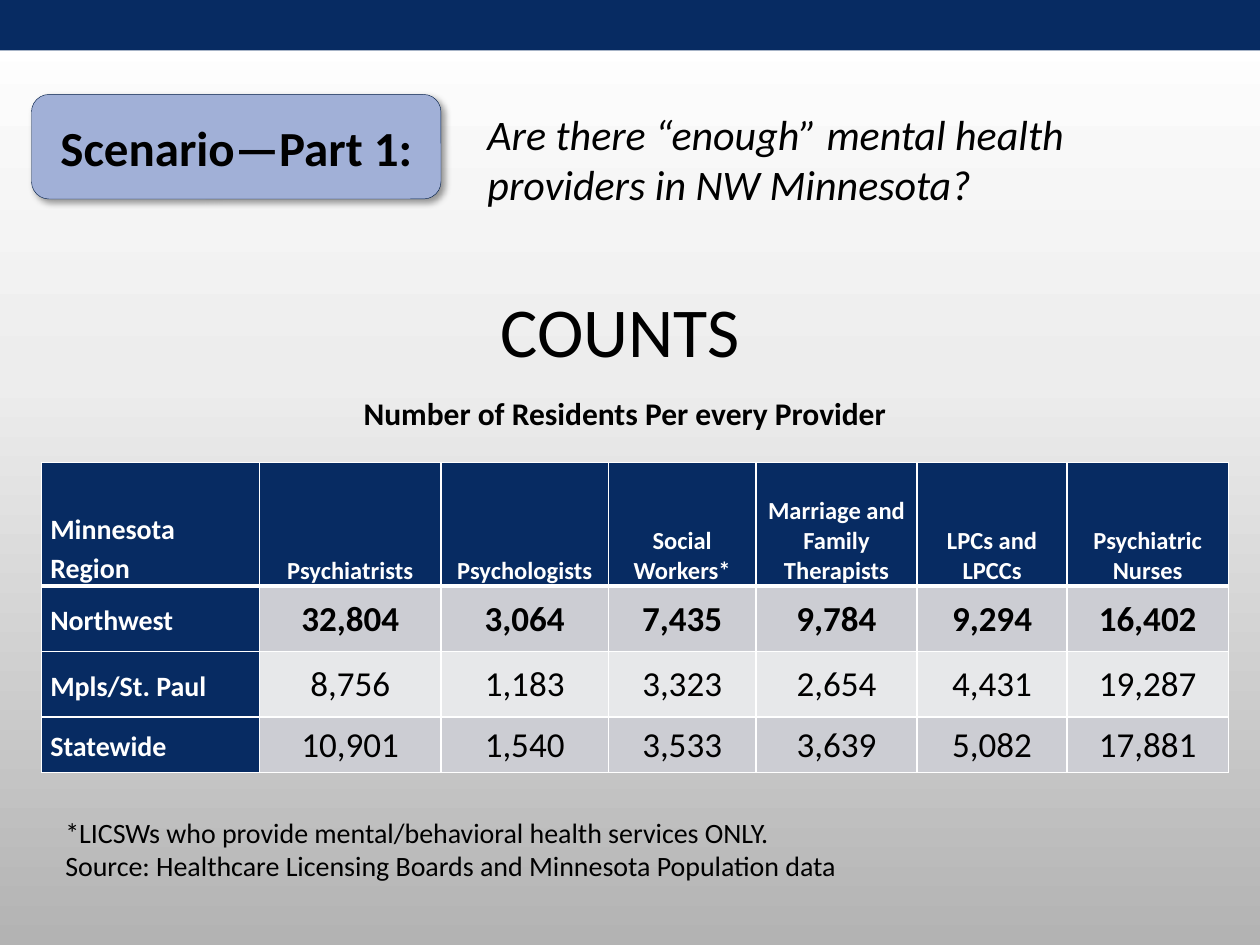
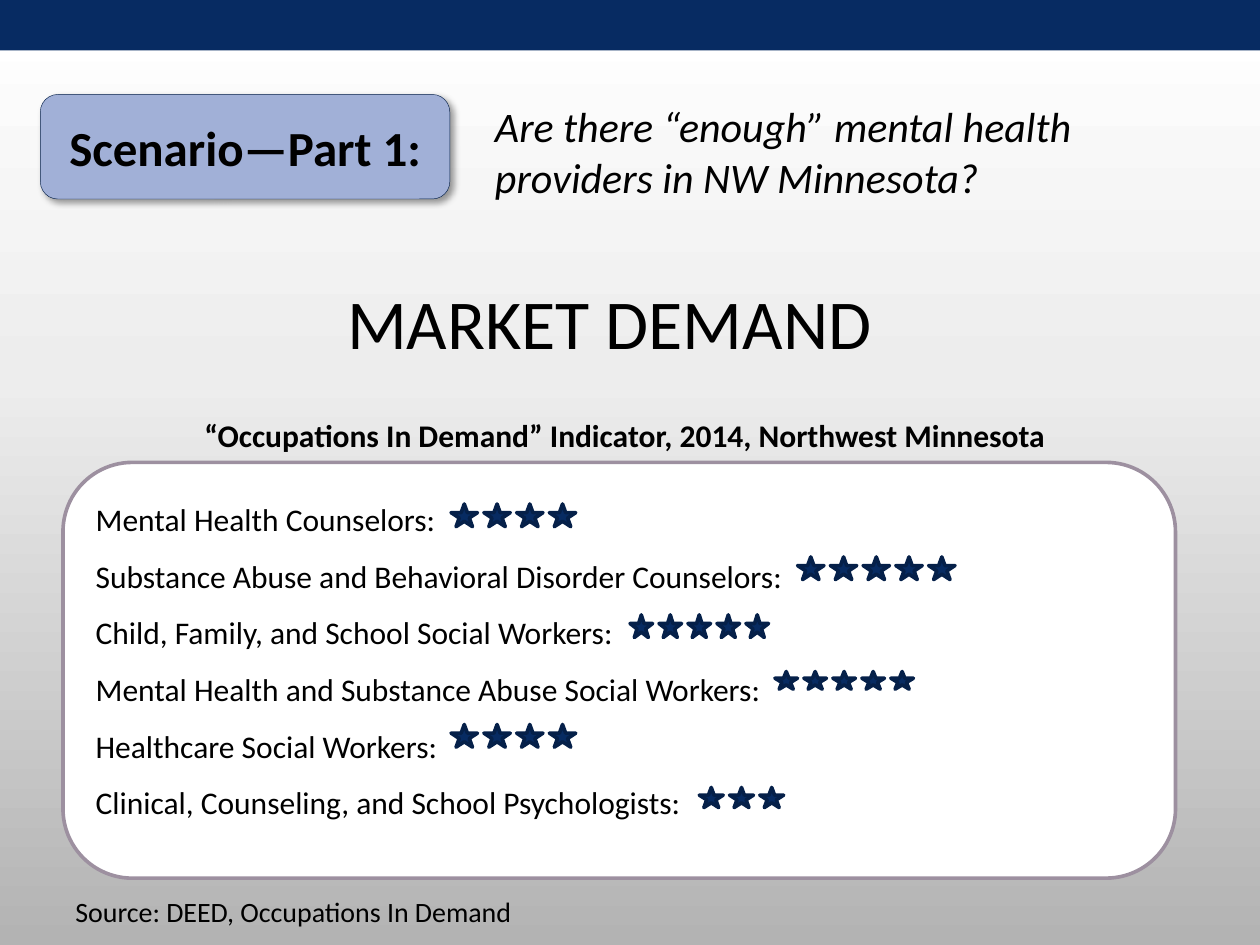
from dataclasses import dataclass
from copy import deepcopy

from lxml.etree import SubElement as Sub
from pptx import Presentation
from pptx.dml.color import RGBColor as RGB
from pptx.enum.shapes import MSO_SHAPE as Kind
from pptx.enum.text import MSO_ANCHOR as Anchor, MSO_AUTO_SIZE as Auto, PP_ALIGN as Align
from pptx.oxml.ns import qn
from pptx.util import Emu, Pt

SCALE = 9144  # EMU in one px, 100 px to the inch
TITLE_ONLY = 5


@dataclass(frozen=True)
class Theme:
    font: str = "Calibri"
    navy: str = "072B62"
    edge: str = "052049"
    badge: str = "A1B0D7"
    mauve: str = "9D90A0"
    white: str = "FFFFFF"
    black: str = "000000"
    bands: tuple = ("CCCDD3", "E7E8EA")
    back: tuple = ((0, "FFFFFF"), (0.4, "EDEDED"), (1, "B3B3B3"))
    title: int = 40
    tag: int = 28
    ask: int = 24
    figure: int = 20
    body: int = 18
    note: int = 16
    head: int = 14


T = Theme()

QUESTION = "Are there “enough” mental health providers in NW Minnesota?"
TAG = "Scenario—Part 1:"

HEADS = ["Minnesota Region", "Psychiatrists", "Psychologists", "Social Workers*",
         "Marriage and Family Therapists", "LPCs and LPCCs", "Psychiatric Nurses"]
REGIONS = [
    ["Northwest", "32,804", "3,064", "7,435", "9,784", "9,294", "16,402"],
    ["Mpls/St. Paul", "8,756", "1,183", "3,323", "2,654", "4,431", "19,287"],
    ["Statewide", "10,901", "1,540", "3,533", "3,639", "5,082", "17,881"],
]
WIDTHS = [173, 144, 133, 117, 128, 119, 128]
HEIGHTS = [98, 52, 52, 44]

# label, number of stars, left and top in the panel, star width and height
JOBS = [
    ("Mental Health Counselors:", 4, 308, 33, 21, 18),
    ("Substance Abuse and Behavioral Disorder Counselors:", 5, 583, 75, 21, 18),
    ("Child, Family, and School Social Workers:", 5, 450, 121, 18, 18),
    ("Mental Health and Substance Abuse Social Workers:", 5, 565, 166, 18, 14),
    ("Healthcare Social Workers:", 4, 308, 208, 21, 18),
    ("Clinical, Counseling, and School Psychologists:", 3, 505, 258, 19, 16),
]
STAR_GAP = 5


def px(n):
    return Emu(n * SCALE)


def place(box):
    return [px(n) for n in box]


def style(frame, size, color=T.black, bold=False, italic=False, align=Align.LEFT, lead=None):
    """Give every paragraph of a frame the same look."""
    for para in frame.paragraphs:
        para.alignment = align
        if lead:
            para.line_spacing = lead
        for run in para.runs:
            font = run.font
            font.name, font.size = T.font, Pt(size)
            font.bold, font.italic = bold, italic
            font.color.rgb = RGB.from_string(color)


def inset(part, left, top, right, low):
    part.margin_left, part.margin_top = px(left), px(top)
    part.margin_right, part.margin_bottom = px(right), px(low)


def shape(parent, kind, box, fill, line=None, width=1):
    item = parent.shapes.add_shape(kind, *place(box))
    item.shadow.inherit = False
    item.fill.solid()
    item.fill.fore_color.rgb = RGB.from_string(fill)
    if line:
        item.line.color.rgb = RGB.from_string(line)
        item.line.width = Pt(width)
    else:
        item.line.fill.background()
    return item


def label(slide, box, text, size, **look):
    frame = slide.shapes.add_textbox(*place(box)).text_frame
    frame.word_wrap = True
    frame.text = text
    style(frame, size, **look)


def shade(master):
    """Lay the grey gradient behind all slides."""
    fill = master.background.fill
    fill.gradient()
    fill.gradient_angle = 270
    stops = master.element.find(".//" + qn("a:gsLst"))
    stops.append(deepcopy(stops[-1]))
    for stop, (pos, color) in zip(fill.gradient_stops, T.back):
        stop.position = pos
        stop.color.rgb = RGB.from_string(color)


def drop(item):
    """Cast a soft shadow to the lower right."""
    effects = item.element.spPr.find(qn("a:effectLst"))
    cast = Sub(effects, qn("a:outerShdw"), blurRad=str(Pt(4)), dist=str(Pt(3)),
               dir="2700000", algn="tl", rotWithShape="0")
    color = Sub(cast, qn("a:srgbClr"), val=T.black)
    Sub(color, qn("a:alpha"), val="40000")


def badge(slide, box):
    item = shape(slide, Kind.ROUNDED_RECTANGLE, box, T.badge, T.edge, 0.25)
    drop(item)
    frame = item.text_frame
    frame.text = TAG
    frame.vertical_anchor = Anchor.MIDDLE
    style(frame, T.tag, bold=True, align=Align.CENTER)


def start(deck, title, box, tag, ask):
    """Add a slide with its bands, title, badge and question."""
    slide = deck.slides.add_slide(deck.slide_layouts[TITLE_ONLY])
    shape(slide, Kind.RECTANGLE, (0, 24, 1000, 25), T.white)
    shape(slide, Kind.RECTANGLE, (0, 0, 1000, 40), T.navy)
    head = slide.shapes.title
    head.left, head.top, head.width, head.height = place(box)
    frame = head.text_frame
    frame.text = title
    frame.auto_size = Auto.NONE
    frame.vertical_anchor = Anchor.TOP
    style(frame, T.title, align=Align.CENTER)
    badge(slide, tag)
    label(slide, ask, QUESTION, T.ask, italic=True)
    return slide


def rule(cell, top, low):
    """Draw white borders; top and low are widths in points."""
    props = cell._tc.get_or_add_tcPr()
    for side, width in (("L", 1), ("R", 1), ("T", top), ("B", low)):
        line = Sub(props, qn("a:ln" + side), w=str(Pt(width)))
        Sub(Sub(line, qn("a:solidFill")), qn("a:srgbClr"), val=T.white)


def grid(slide, box):
    rows = [HEADS] + REGIONS
    table = slide.shapes.add_table(len(rows), len(HEADS), *place(box)).table
    for col, width in zip(table.columns, WIDTHS):
        col.width = px(width)
    for r, row in enumerate(rows):
        table.rows[r].height = px(HEIGHTS[r])
        for c, text in enumerate(row):
            cell = table.cell(r, c)
            cell.text = text
            rule(cell, 3 if r == 1 else 1, 3 if r == 0 else 1)
            cell.vertical_anchor = Anchor.MIDDLE if r else Anchor.BOTTOM
            named = r == 0 or c == 0
            inset(cell, *((7, 0, 7, 0) if named else (1, 1, 1, 0)))
            cell.fill.solid()
            fill = T.navy if named else T.bands[(r - 1) % 2]
            cell.fill.fore_color.rgb = RGB.from_string(fill)
            if c == 0:
                style(cell.text_frame, T.note, T.white, bold=True, lead=1.15)
            elif r == 0:
                style(cell.text_frame, T.head, T.white, bold=True, align=Align.CENTER)
            else:
                style(cell.text_frame, T.figure, bold=r == 1, align=Align.CENTER)


def stars(slide, left, top, count, width, height):
    group = slide.shapes.add_group_shape()
    for i in range(count):
        box = (left + i * (width + STAR_GAP), top, width, height)
        shape(group, Kind.STAR_5_POINT, box, T.navy, T.edge, 2.08)


def panel(slide, box):
    """List the jobs in a rounded panel, each with its row of stars."""
    item = shape(slide, Kind.ROUNDED_RECTANGLE, box, T.white, T.mauve, 2.08)
    frame = item.text_frame
    frame.text = "\n".join(job[0] for job in JOBS)
    frame.vertical_anchor = Anchor.BOTTOM
    inset(frame, 10, 0, 10, 29)
    style(frame, T.body, lead=1.5)
    for _, count, left, top, width, height in JOBS:
        stars(slide, box[0] + left, box[1] + top, count, width, height)


def counts(deck):
    slide = start(deck, "COUNTS", (188, 223, 608, 77),
                  tag=(25, 75, 325, 83), ask=(377, 81, 592, 91))
    grid(slide, (33, 367, 942, 246))
    label(slide, (42, 308, 908, 42), "Number of Residents Per every Provider",
          T.body, bold=True, align=Align.CENTER)
    label(slide, (42, 642, 817, 64),
          "*LICSWs who provide mental/behavioral health services ONLY.\n"
          "Source: Healthcare Licensing Boards and Minnesota Population data", T.note)


def demand(deck):
    slide = start(deck, "MARKET DEMAND", (142, 217, 683, 77),
                  tag=(32, 75, 325, 83), ask=(383, 75, 592, 91))
    label(slide, (42, 325, 908, 42),
          "“Occupations In Demand” Indicator, 2014, Northwest Minnesota",
          T.body, bold=True, align=Align.CENTER)
    label(slide, (50, 705, 817, 37), "Source: DEED, Occupations In Demand", T.note)
    panel(slide, (50, 367, 883, 330))


def main():
    deck = Presentation()
    deck.slide_width, deck.slide_height = px(1000), px(750)
    shade(deck.slide_master)
    counts(deck)
    demand(deck)
    deck.save("out.pptx")


if __name__ == "__main__":
    main()
